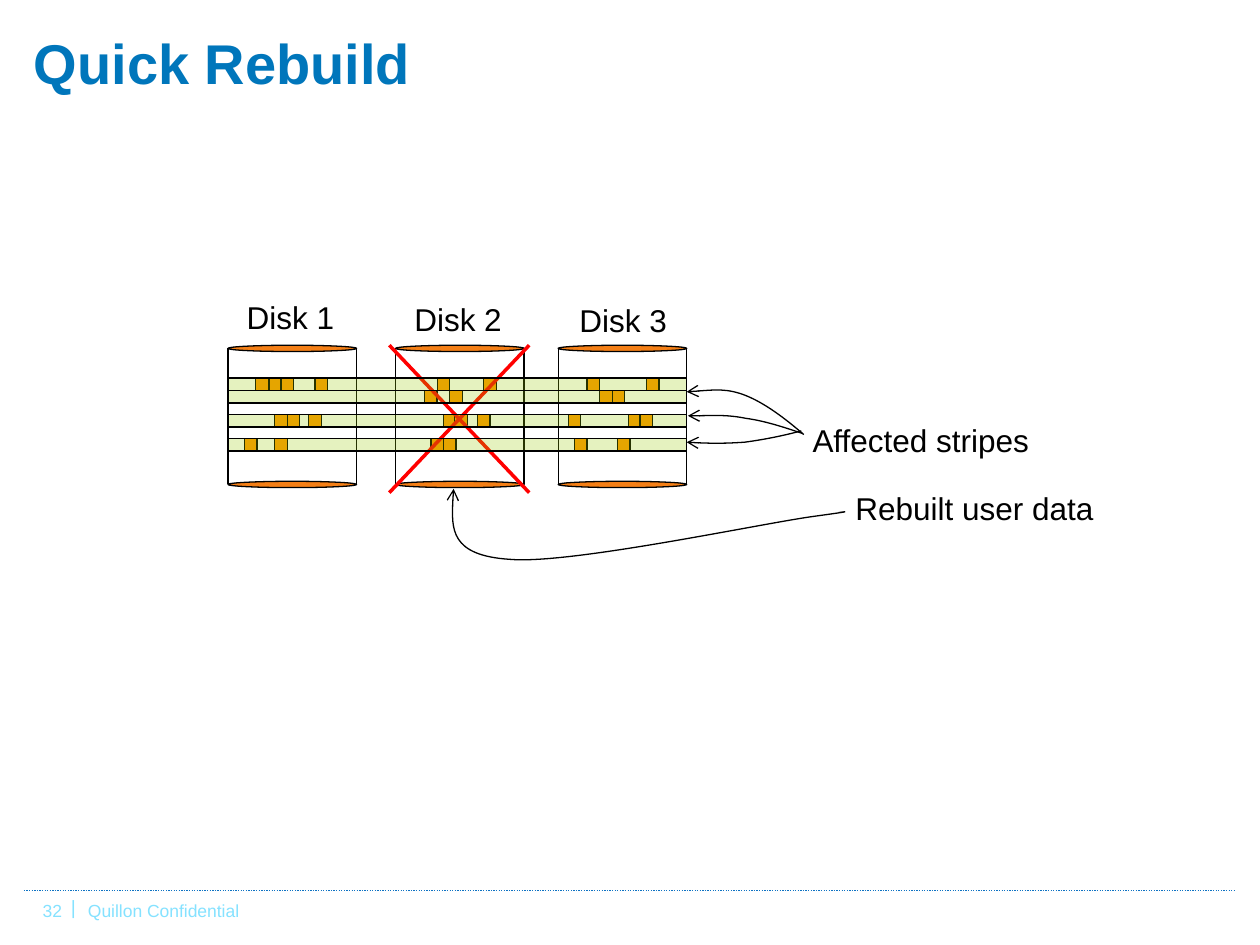
from lxml import etree
from pptx import Presentation
from pptx.dml.color import RGBColor
from pptx.enum.dml import MSO_LINE
from pptx.enum.shapes import MSO_CONNECTOR, MSO_SHAPE
from pptx.enum.text import MSO_ANCHOR
from pptx.oxml.ns import qn
from pptx.util import Inches, Pt

STRAIGHT = MSO_CONNECTOR.STRAIGHT
RECTANGLE, ELLIPSE = MSO_SHAPE.RECTANGLE, MSO_SHAPE.OVAL
TOP, MIDDLE = MSO_ANCHOR.TOP, MSO_ANCHOR.MIDDLE
FINE_DOTS = MSO_LINE.ROUND_DOT

BLACK = RGBColor(0x00, 0x00, 0x00)
RED = RGBColor(0xFF, 0x00, 0x00)
TITLE_BLUE = RGBColor(0x00, 0x76, 0xBB)
RULE_BLUE = RGBColor(0x0F, 0x73, 0xC3)
FOOTER_BLUE = RGBColor(0x85, 0xE2, 0xFF)
DISK_ORANGE = RGBColor(0xF4, 0x7F, 0x16)
BLOCK_ORANGE = RGBColor(0xFF, 0x99, 0x00)
STRIPE_GREEN = RGBColor(0x99, 0xCC, 0x00)

# Content: text, left, top, width, height, size, colour
TITLE = ("Quick Rebuild", 0.17, 0.17, 7.47, 0.64, 32, TITLE_BLUE)
FOOTER = [
    ("32", 0.24, 7.09, 0.51, 0.27, 10, FOOTER_BLUE),
    ("Quillon Confidential", 0.6, 7.09, 5, 0.47, 10, FOOTER_BLUE),
    ("|", 0.47, 7.06, 0.19, 0.27, 11, FOOTER_BLUE),
]
CALLOUTS = [
    ("Affected stripes", 6.35, 3.29, 1.92, 0.4, 18, BLACK),
    ("Rebuilt user data", 6.69, 3.83, 2.09, 0.4, 18, BLACK),
]

# Each disk: name, left, label left and top, block offsets for each stripe
DISKS = [
    ("Disk 1", 1.81, 1.86, 2.32,
     [(0.22, 0.33, 0.42, 0.69), (), (0.37, 0.47, 0.64), (0.13, 0.37)]),
    ("Disk 2", 3.14, 3.19, 2.33,
     [(0.33, 0.70), (0.23, 0.43), (0.38, 0.47, 0.65), (0.28, 0.38)]),
    ("Disk 3", 4.43, 4.50, 2.34,
     [(0.23, 0.70), (0.33, 0.43), (0.08, 0.56, 0.65), (0.13, 0.47)]),
]
DISK_WIDTH, DISK_TOP, DISK_BOTTOM, RIM = 1.02, 2.74, 3.82, 0.05
STRIPE_TOPS = [3.0, 3.1, 3.29, 3.48]
BLOCK = 0.1
FAILED_DISK = (3.09, 2.74, 4.2, 3.91)

# Curved arrows: start point, then groups of three Bezier points
CURVES = [
    ("tailEnd", [(6.38, 3.45), (6.23, 3.32), (6.07, 3.2), (5.92, 3.14),
                 (5.77, 3.08), (5.61, 3.1), (5.45, 3.11)]),
    ("tailEnd", [(6.37, 3.44), (6.22, 3.39), (6.07, 3.34), (5.92, 3.32),
                 (5.77, 3.29), (5.61, 3.3), (5.46, 3.3)]),
    ("tailEnd", [(6.36, 3.42), (6.21, 3.46), (6.06, 3.49), (5.91, 3.51),
                 (5.76, 3.52), (5.6, 3.52), (5.45, 3.51)]),
    ("headEnd", [(3.6, 3.88), (3.58, 4.14), (3.57, 4.41), (4.05, 4.44),
                 (4.52, 4.48), (6.02, 4.16), (6.45, 4.1),
                 (6.89, 4.04), (6.62, 4.07), (6.66, 4.07)]),
]

deck = Presentation()
deck.slide_width, deck.slide_height = Inches(10), Inches(7.5)
page = deck.slides.add_slide(deck.slide_layouts[6])


def add_text(text, left, top, width, height, size, color,
             bold=False, wrap=False, anchor=TOP):
    box = page.shapes.add_textbox(*map(Inches, (left, top, width, height)))
    frame = box.text_frame
    frame.text = text
    frame.word_wrap = wrap
    frame.vertical_anchor = anchor
    font = frame.paragraphs[0].runs[0].font
    font.name, font.size, font.bold = "Arial", Pt(size), bold
    font.color.rgb = color


def add_line(x1, y1, x2, y2, color=BLACK, width=0.75):
    line = page.shapes.add_connector(STRAIGHT, *map(Inches, (x1, y1, x2, y2)))
    line.line.color.rgb = color
    line.line.width = Pt(width)
    etree.SubElement(line._element.spPr, qn("a:effectLst"))
    return line


def add_filled(kind, left, top, width, height, color):
    shape = page.shapes.add_shape(kind, *map(Inches, (left, top, width, height)))
    shape.shadow.inherit = False
    shape.fill.solid()
    shape.fill.fore_color.rgb = color
    shape.line.color.rgb = BLACK
    shape.line.width = Pt(0.75)
    return shape


def add_curved_arrow(arrow_end, points):
    start, *controls = [(Inches(x), Inches(y)) for x, y in points]
    builder = page.shapes.build_freeform(*start)
    builder.add_line_segments(controls, close=False)
    curve = builder.convert_to_shape()
    curve.shadow.inherit = False
    curve.fill.background()
    curve.line.color.rgb = BLACK
    curve.line.width = Pt(0.75)
    etree.SubElement(curve.line._get_or_add_ln(), qn(f"a:{arrow_end}"), type="arrow")

    # Turn every three straight segments into one Bezier segment
    outline = next(curve._element.iter(qn("a:path")))
    segments = outline.findall(qn("a:lnTo"))
    for first in range(0, len(segments), 3):
        bezier = etree.SubElement(outline, qn("a:cubicBezTo"))
        for segment in segments[first:first + 3]:
            bezier.append(segment[0])
            outline.remove(segment)


# Footer and title
rule = add_line(0.19, 7.07, 9.81, 7.07, RULE_BLUE)
rule.line.dash_style = FINE_DOTS
for item in FOOTER:
    add_text(*item)
add_text(*TITLE, bold=True, wrap=True, anchor=MIDDLE)

# Disks with their data blocks
for name, left, label_left, label_top, rows in DISKS:
    for rim_top in (DISK_TOP, DISK_BOTTOM):
        add_filled(ELLIPSE, left, rim_top, DISK_WIDTH, RIM, DISK_ORANGE)
    for side in (left, left + DISK_WIDTH):
        add_line(side, DISK_TOP + RIM / 2, side, DISK_BOTTOM + RIM / 2)
    for stripe_top, offsets in zip(STRIPE_TOPS, rows):
        for offset in offsets:
            add_filled(RECTANGLE, left + offset, stripe_top, BLOCK, BLOCK, BLOCK_ORANGE)
    add_text(name, label_left, label_top, 0.9, 0.4, 18, BLACK)

# Cross over the failed disk
x1, y1, x2, y2 = FAILED_DISK
add_line(x1, y1, x2, y2, RED, 2)
add_line(x2, y1, x1, y2, RED, 2)

# Translucent stripes across all disks
stripe_left = DISKS[0][1]
stripe_width = DISKS[-1][1] + DISK_WIDTH - stripe_left
for stripe_top in STRIPE_TOPS:
    stripe = add_filled(RECTANGLE, stripe_left, stripe_top, stripe_width, BLOCK, STRIPE_GREEN)
    color = stripe._element.spPr.find(qn("a:solidFill"))[0]
    etree.SubElement(color, qn("a:alpha"), val="25000")

# Callouts
for item in CALLOUTS:
    add_text(*item)
for arrow_end, points in CURVES:
    add_curved_arrow(arrow_end, points)

deck.save("out.pptx")
